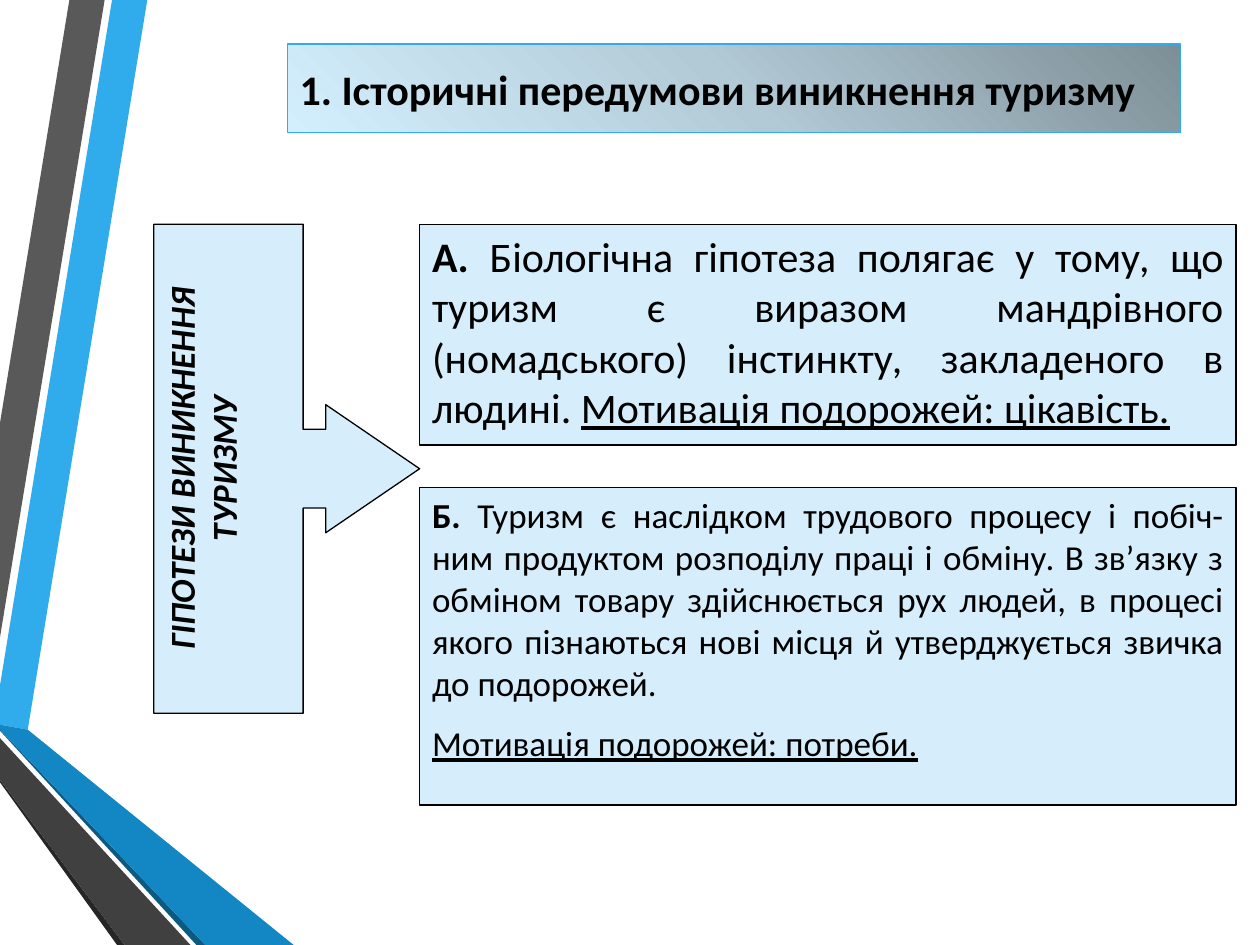
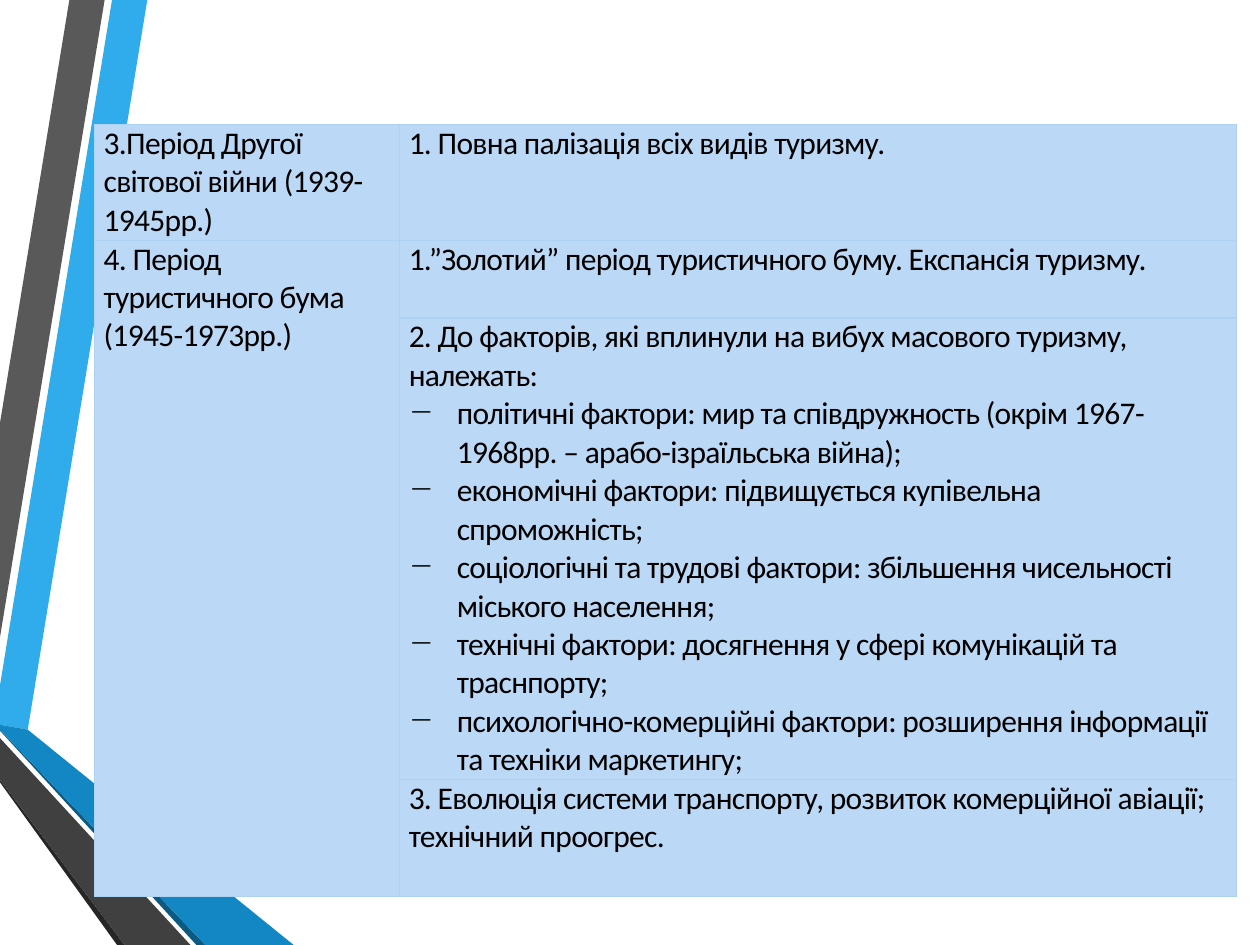
import copy
from dataclasses import dataclass

import pptx
import pptx.dml.color
import pptx.enum.shapes
import pptx.enum.text
import pptx.oxml
import pptx.oxml.ns
import pptx.util
from pptx.util import Cm

Align = pptx.enum.text.PP_ALIGN
Anchor = pptx.enum.text.MSO_ANCHOR
Preset = pptx.enum.shapes.MSO_SHAPE
qn = pptx.oxml.ns.qn


@dataclass(frozen=True)
class Theme:
    font: str = "Calibri"
    text: str = "000000"
    outline: str = "000000"
    accent: str = "30ACEC"
    panel: str = "D6EEFB"
    table_fill: str = "BBD9F6"
    table_border: str = "AED2F4"
    title_gradient: tuple = ((0, "7D8E96"), (0.5, "B2CAD6"), (1, "D3EFFE"))
    line_width: float = 0.75
    title_size: int = 24
    large_size: int = 24
    body_size: int = 20
    table_size: int = 18


THEME = Theme()


@dataclass(frozen=True)
class Ribbon:
    color: str
    points: tuple[tuple[float, float], ...]


@dataclass(frozen=True)
class Area:
    left: float
    top: float
    width: float
    height: float


@dataclass(frozen=True)
class Hypothesis:
    area: Area
    size: int
    letter: str
    statement: str
    motive: str
    motive_on_new_line: bool


RIBBONS = (
    Ribbon(THEME.accent, ((0, 13.82), (0, 14.61), (0.56, 14.71), (2.97, 0), (2.26, 0))),
    Ribbon("595959", ((2.11, 0), (1.4, 0), (0, 8.53), (0, 12.85))),
    Ribbon("262626", ((0, 15.72), (0, 15.77), (2.36, 19.05), (2.51, 19.05))),
    Ribbon("0C5A82", ((0, 14.71), (0, 14.73), (3.96, 19.05), (4.14, 19.05))),
    Ribbon("1287C3", ((0, 14.71), (4.14, 19.05), (5.92, 19.05), (0.56, 14.71), (0, 14.61))),
    Ribbon("404040", ((0, 15.72), (2.51, 19.05), (3.84, 19.05), (0, 14.88))),
)

TITLE_AREA = Area(5.79, 0.89, 18.01, 1.78)
CALLOUT_AREA = Area(3.1, 4.52, 5.36, 9.86)
CALLOUT_ADJUSTMENTS = (0.296, 0.241, 0.353, 0.562)

HYPOTHESES = (
    Hypothesis(
        Area(8.46, 4.52, 16.46, 4.45), THEME.large_size, "А.",
        " Біологічна гіпотеза полягає у тому, що туризм є виразом мандрівного "
        "(номадського) інстинкту, закладеного в людині. ",
        "Мотивація подорожей: цікавість.", False,
    ),
    Hypothesis(
        Area(8.46, 9.83, 16.46, 6.4), THEME.body_size, "Б.",
        " Туризм є наслідком трудового процесу і побіч-ним продуктом розподілу праці "
        "і обміну. В зв’язку з обміном товару здійснюється рух людей, в процесі якого "
        "пізнаються нові місця й утверджується звичка до подорожей.",
        "Мотивація подорожей: потреби.", True,
    ),
)

TABLE_LEFT, TABLE_TOP = 1.91, 2.51
COLUMN_WIDTHS = (6.15, 16.87)
ROW_HEIGHTS = (2.33, 1.57, 9.3, 2.36)
BULLET = "−"
FACTORS = (
    "політичні фактори: мир та співдружность (окрім 1967-1968рр. – арабо-ізраїльська війна);",
    "економічні фактори: підвищується купівельна спроможність;",
    "соціологічні та трудові фактори: збільшення чисельності міського населення;",
    "технічні фактори: досягнення у сфері комунікацій та траснпорту;",
    "психологічно-комерційні фактори: розширення інформації та техніки маркетингу;",
)
PERIOD_CELLS = {
    (0, 0): "3.Період Другої світової війни (1939-1945рр.)",
    (0, 1): "1. Повна палізація всіх видів туризму.",
    (1, 0): "4. Період туристичного бума (1945-1973рр.)",
    (1, 1): "1.”Золотий” період туристичного буму. Експансія туризму.",
    (2, 1): "2. До факторів, які вплинули на вибух масового туризму, належать:",
    (3, 1): "3. Еволюція системи транспорту, розвиток комерційної авіації; технічний проогрес.",
}


def rgb(color: str) -> pptx.dml.color.RGBColor:
    return pptx.dml.color.RGBColor.from_string(color)


def add_span(para, text: str, *, size: int, bold: bool = False, italic: bool = False,
             underline: bool = False, spacing: float = 0) -> None:
    span = para.add_run()
    span.text = text
    font = span.font
    font.name, font.size = THEME.font, pptx.util.Pt(size)
    font.bold, font.italic, font.underline = bold, italic, underline
    font.color.rgb = rgb(THEME.text)
    if spacing:
        span._r.get_or_add_rPr().set("spc", str(round(spacing * 100)))


def indent_hanging(para, distance: float) -> None:
    properties = para._p.get_or_add_pPr()
    properties.set("marL", str(Cm(distance)))
    properties.set("indent", str(-Cm(distance)))


def add_box(page, area: Area, *, preset=Preset.RECTANGLE, fill: str = THEME.panel,
            line: str = THEME.outline, anchor=Anchor.TOP):
    box = page.shapes.add_shape(
        preset, Cm(area.left), Cm(area.top), Cm(area.width), Cm(area.height))
    box.shadow.inherit = False
    box.fill.solid()
    box.fill.fore_color.rgb = rgb(fill)
    box.line.color.rgb = rgb(line)
    box.line.width = pptx.util.Pt(THEME.line_width)
    box.text_frame.word_wrap = True
    box.text_frame.vertical_anchor = anchor
    return box


def style_para(para, align, space_after: float = 10):
    para.alignment = align
    para.space_after = pptx.util.Pt(space_after)
    return para


def draw_ribbons(page) -> None:
    for ribbon in RIBBONS:
        start, *others = [(Cm(x), Cm(y)) for x, y in ribbon.points]
        builder = page.shapes.build_freeform(*start)
        builder.add_line_segments(others, close=True)
        shape = builder.convert_to_shape()
        shape.shadow.inherit = False
        shape.fill.solid()
        shape.fill.fore_color.rgb = rgb(ribbon.color)
        shape.line.fill.background()


def add_page(deck):
    page = deck.slides.add_slide(deck.slide_layouts[6])
    draw_ribbons(page)
    return page


def draw_title(page, text: str) -> None:
    box = add_box(page, TITLE_AREA, line=THEME.accent, anchor=Anchor.MIDDLE)
    box.fill.gradient()
    box.fill.gradient_angle = 225
    stop_list = box._element.spPr.find(".//" + qn("a:gsLst"))
    stop_list.append(copy.deepcopy(stop_list[0]))
    for stop, (position, color) in zip(box.fill.gradient_stops, THEME.title_gradient):
        stop.position = position
        stop.color.rgb = rgb(color)
    para = style_para(box.text_frame.paragraphs[0], Align.LEFT, 6)
    indent_hanging(para, 0.79)
    add_span(para, text, size=THEME.title_size, bold=True)


def draw_callout(page, text: str) -> None:
    callout = add_box(page, CALLOUT_AREA, preset=Preset.RIGHT_ARROW_CALLOUT)
    for index, value in enumerate(CALLOUT_ADJUSTMENTS):
        callout.adjustments[index] = value
    callout.text_frame._txBody.bodyPr.set("vert", "vert270")
    para = style_para(callout.text_frame.paragraphs[0], Align.CENTER)
    add_span(para, text, size=THEME.body_size, bold=True, italic=True)


def draw_hypothesis(page, hypothesis: Hypothesis) -> None:
    frame = add_box(page, hypothesis.area).text_frame
    para = style_para(frame.paragraphs[0], Align.JUSTIFY)
    add_span(para, hypothesis.letter, size=hypothesis.size, bold=True)
    add_span(para, hypothesis.statement, size=hypothesis.size)
    if hypothesis.motive_on_new_line:
        para = style_para(frame.add_paragraph(), Align.JUSTIFY)
    add_span(para, hypothesis.motive, size=hypothesis.size, underline=True)


def style_cell(cell) -> None:
    """Set the margins, fill and four borders of a table cell."""
    cell.margin_left = cell.margin_right = Cm(0.18)
    cell.margin_top = cell.margin_bottom = 0
    cell.fill.solid()
    cell.fill.fore_color.rgb = rgb(THEME.table_fill)
    properties = cell._tc.get_or_add_tcPr()
    for index, side in enumerate(("lnL", "lnR", "lnT", "lnB")):
        properties.insert(index, pptx.oxml.parse_xml(
            f'<a:{side} xmlns:a="http://schemas.openxmlformats.org/drawingml/2006/main" '
            f'w="{pptx.util.Pt(THEME.line_width)}"><a:solidFill>'
            f'<a:srgbClr val="{THEME.table_border}"/></a:solidFill></a:{side}>'))


def add_cell_span(para, text: str) -> None:
    add_span(para, text, size=THEME.table_size, spacing=-0.4)


def add_bullet(frame, text: str) -> None:
    para = frame.add_paragraph()
    indent_hanging(para, 0.97)
    bullet = para._p.get_or_add_pPr().makeelement(qn("a:buChar"), {"char": BULLET})
    para._p.get_or_add_pPr().append(bullet)
    add_cell_span(para, text)


def draw_periods(page) -> None:
    table = page.shapes.add_table(
        len(ROW_HEIGHTS), len(COLUMN_WIDTHS), Cm(TABLE_LEFT), Cm(TABLE_TOP),
        Cm(sum(COLUMN_WIDTHS)), Cm(sum(ROW_HEIGHTS))).table
    table.first_row = table.horz_banding = False
    for column, width in zip(table.columns, COLUMN_WIDTHS):
        column.width = Cm(width)
    for row, height in zip(table.rows, ROW_HEIGHTS):
        row.height = Cm(height)
    for cell in table.iter_cells():
        style_cell(cell)
    table.cell(1, 0).merge(table.cell(3, 0))
    for position, text in PERIOD_CELLS.items():
        add_cell_span(table.cell(*position).text_frame.paragraphs[0], text)
    for factor in FACTORS:
        add_bullet(table.cell(2, 1).text_frame, factor)


def main() -> None:
    deck = pptx.Presentation()
    deck.slide_width, deck.slide_height = Cm(25.4), Cm(19.05)

    page = add_page(deck)
    draw_title(page, "1. Історичні передумови виникнення туризму")
    draw_callout(page, "ГІПОТЕЗИ ВИНИКНЕННЯ ТУРИЗМУ")
    for hypothesis in HYPOTHESES:
        draw_hypothesis(page, hypothesis)

    draw_periods(add_page(deck))
    deck.save("out.pptx")


if __name__ == "__main__":
    main()
